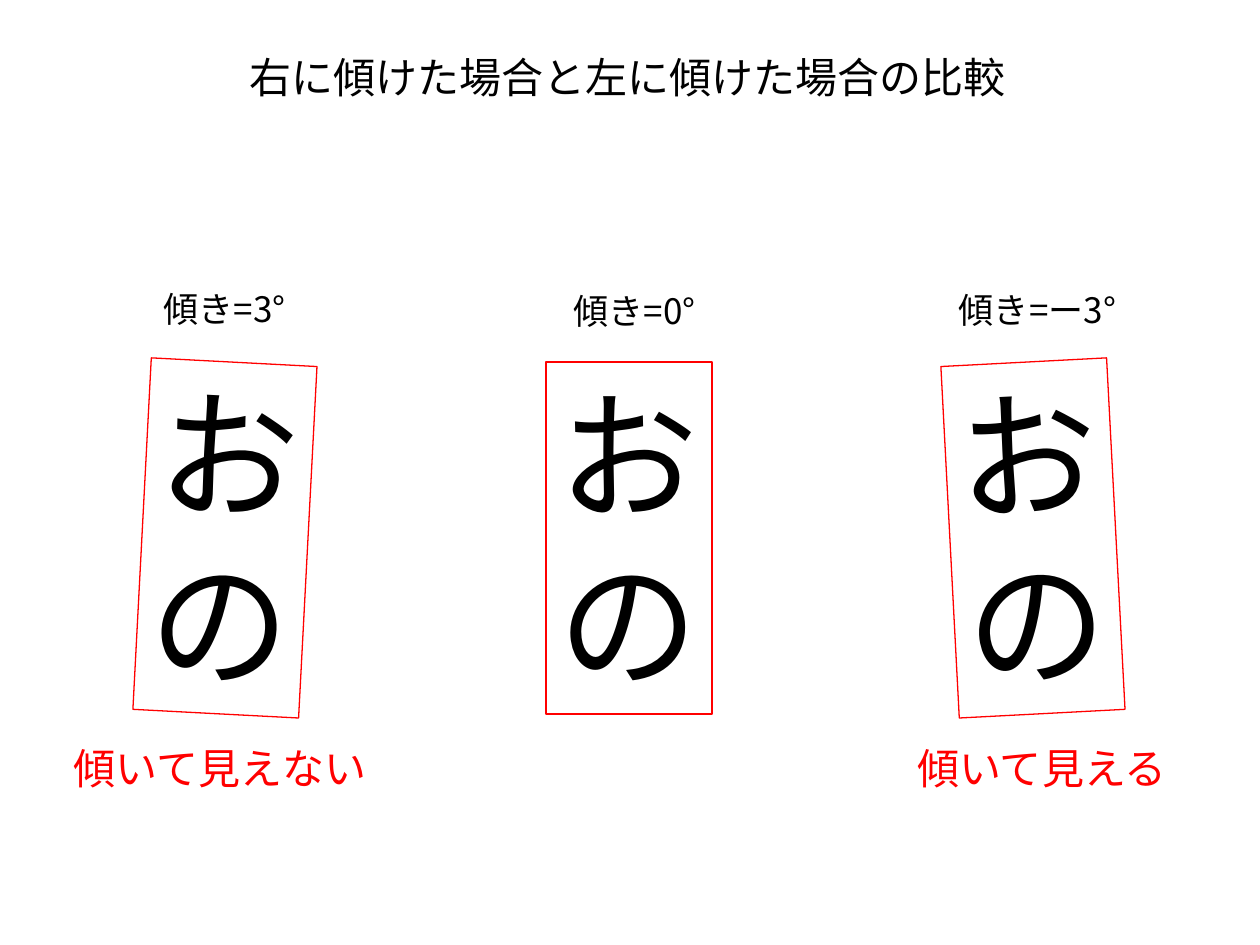
from dataclasses import dataclass

from lxml.etree import SubElement
from pptx import Presentation
from pptx.dml.color import RGBColor as RGB
from pptx.enum.shapes import MSO_SHAPE as SHAPE
from pptx.enum.text import MSO_ANCHOR as ANCHOR, MSO_AUTO_SIZE as FIT, PP_ALIGN as ALIGN
from pptx.oxml.ns import qn
from pptx.util import Emu, Pt

EMU_PER_PX = 914400 / 126


@dataclass(frozen=True)
class Theme:
    ink: RGB = RGB(0, 0, 0)
    accent: RGB = RGB(255, 0, 0)
    latin: str = "Calibri"
    japanese: str = "Noto Sans CJK JP"
    glyph: int = 80
    heading: int = 24
    label: int = 20
    line: float = 0.75


def px(*lengths):
    return [Emu(round(n * EMU_PER_PX)) for n in lengths]


def write(tf, text, *, size, color, latin, asian=None,
          align=ALIGN.CENTER, wrap=True, fit=FIT.NONE):
    tf.auto_size = fit
    tf.word_wrap = wrap
    tf.vertical_anchor = ANCHOR.TOP
    tf.text = text
    for p in tf.paragraphs:
        p.alignment = align
        for r in p.runs:
            r.font.size = Pt(size)
            r.font.color.rgb = color
            r.font.name = latin
            if asian:
                SubElement(r.font._element, qn("a:ea"), typeface=asian)


class Deck:
    def __init__(self, theme):
        self.theme = theme
        self.prs = Presentation()
        self.prs.slide_width, self.prs.slide_height = px(1260, 945)
        self.s = self.prs.slides.add_slide(self.prs.slide_layouts[5])

    def japanese(self, tf, text, size, color):
        font = self.theme.japanese
        write(tf, text, size=size, color=color, latin=font, asian=font)

    def title(self, text, *box):
        sp = self.s.shapes.title
        sp.left, sp.top, sp.width, sp.height = px(*box)
        self.japanese(sp.text_frame, text, self.theme.heading, self.theme.ink)

    def text(self, text, *box, size, color):
        sp = self.s.shapes.add_textbox(*px(*box))
        self.japanese(sp.text_frame, text, size, color)

    def card(self, text, *box, angle):
        t = self.theme
        sp = self.s.shapes.add_shape(SHAPE.RECTANGLE, *px(*box))
        sp.shadow.inherit = False
        sp.fill.background()
        sp.line.color.rgb = t.accent
        sp.line.width = Pt(t.line)
        sp.rotation = angle
        write(sp.text_frame, text, size=t.glyph, color=t.ink, latin=t.latin,
              align=ALIGN.LEFT, wrap=False, fit=FIT.SHAPE_TO_FIT_TEXT)


def main():
    t = Theme()
    deck = Deck(t)
    deck.title("右に傾けた場合と左に傾けた場合の比較", 44, 45, 1167, 129)

    for i, angle in enumerate((3, 0, -3)):
        deck.card("お\nの", 142 + 404 * i, 362, 166, 352, angle=angle)

    for text, x, y in (("傾き=3°", 69, 281),
                       ("傾き=0°", 479, 283),
                       ("傾き=ー3°", 882, 282)):
        deck.text(text, x, y, 311, 49, size=t.label, color=t.ink)

    for text, x in (("傾いて見えない", 60), ("傾いて見える", 882)):
        deck.text(text, x, 736, 320, 129, size=t.heading, color=t.accent)

    deck.prs.save("out.pptx")


if __name__ == "__main__":
    main()
